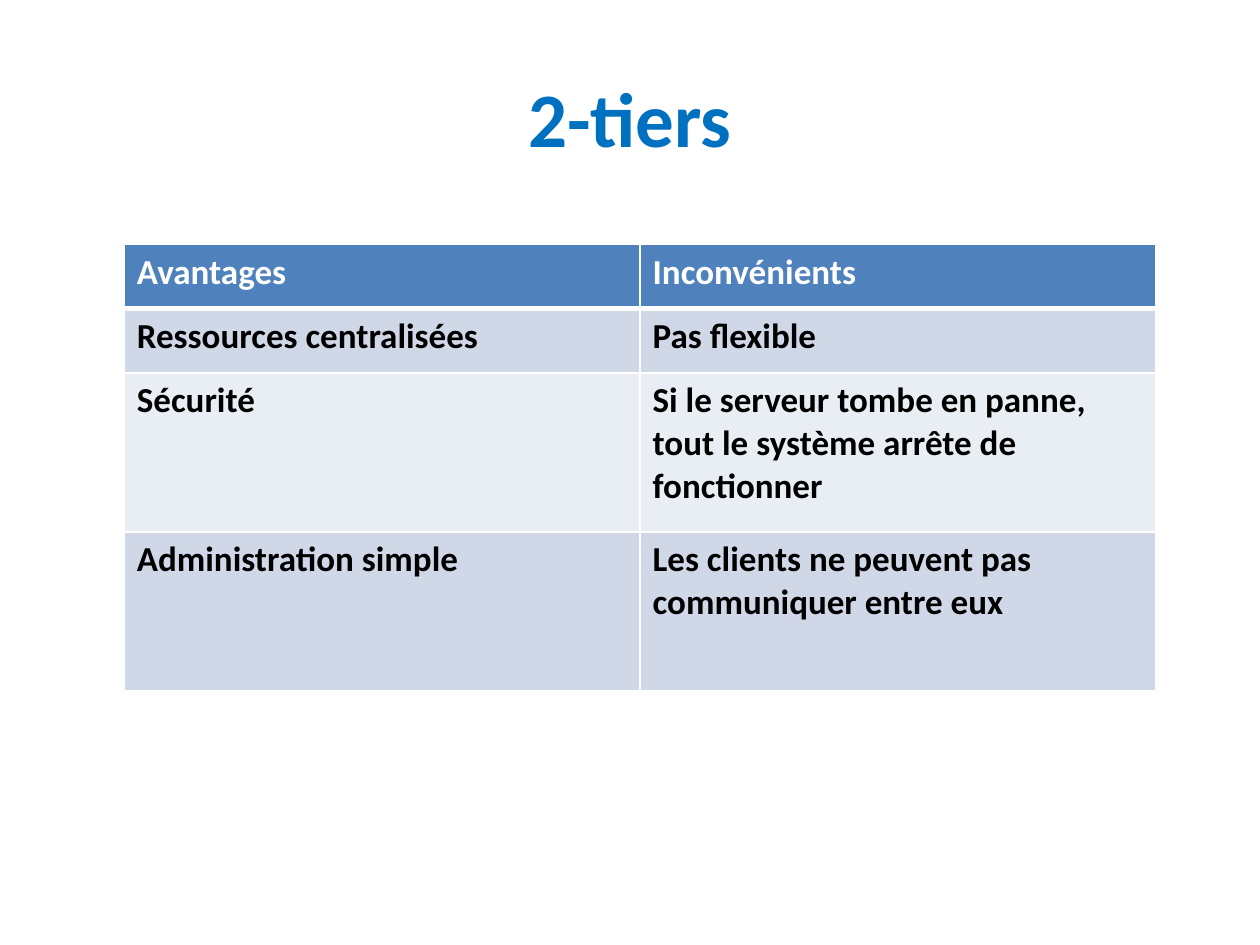
from dataclasses import dataclass

from lxml.etree import SubElement
from pptx import Presentation
from pptx.dml.color import RGBColor
from pptx.enum.text import MSO_ANCHOR, PP_ALIGN
from pptx.oxml.ns import qn
from pptx.util import Pt


@dataclass(frozen=True)
class Theme:
    font: str = "Calibri"
    title: str = "0070C0"
    head: str = "4F81BD"
    bands: tuple = ("D0D8E8", "E9EDF4")
    light: str = "FFFFFF"
    dark: str = "000000"
    title_size: int = 44
    cell_size: int = 20
    thin: int = 1
    thick: int = 3


THEME = Theme()
ROWS = [
    ("Avantages", "Inconvénients"),
    ("Ressources centralisées", "Pas flexible"),
    ("Sécurité", "Si le serveur tombe en panne, tout le système arrête de fonctionner"),
    ("Administration simple", "Les clients ne peuvent pas communiquer entre eux"),
]
HEIGHTS = [36.72, 36.72, 90.72, 90.72]
COL_WIDTH = 294.75


def write(frame, text, size, color):
    par = frame.paragraphs[0]
    par.text = text
    font = par.font
    font.name, font.size, font.bold = THEME.font, Pt(size), True
    font.color.rgb = RGBColor.from_string(color)
    return par


def add_title(slide, text):
    box = slide.shapes.add_textbox(Pt(36), Pt(21.6), Pt(648), Pt(90))
    frame = box.text_frame
    frame.word_wrap = True
    frame.vertical_anchor = MSO_ANCHOR.MIDDLE
    par = write(frame, text, THEME.title_size, THEME.title)
    par.alignment = PP_ALIGN.CENTER


def set_border(cell, **widths):
    # Border lines must come before the fill in the cell properties
    props = cell._tc.get_or_add_tcPr()
    for spot, side in enumerate("LRTB"):
        width = widths.get(side, THEME.thin)
        line = SubElement(props, qn(f"a:ln{side}"), w=str(Pt(width)))
        fill = SubElement(line, qn("a:solidFill"))
        SubElement(fill, qn("a:srgbClr"), val=THEME.light)
        props.insert(spot, line)


def fill_cell(cell, text, row):
    head = row == 0
    back = THEME.head if head else THEME.bands[(row - 1) % 2]
    cell.fill.solid()
    cell.fill.fore_color.rgb = RGBColor.from_string(back)
    write(cell.text_frame, text, THEME.cell_size, THEME.light if head else THEME.dark)
    # A thick line parts the header from the body
    edge = {0: {"B": THEME.thick}, 1: {"T": THEME.thick}}
    set_border(cell, **edge.get(row, {}))


def add_grid(slide, rows):
    count = len(rows[0])
    frame = slide.shapes.add_table(
        len(rows), count, Pt(71), Pt(139.75), Pt(COL_WIDTH * count), Pt(sum(HEIGHTS)))
    table = frame.table
    for col in table.columns:
        col.width = Pt(COL_WIDTH)
    for row, texts in enumerate(rows):
        table.rows[row].height = Pt(HEIGHTS[row])
        for col, text in enumerate(texts):
            fill_cell(table.cell(row, col), text, row)


def main():
    deck = Presentation()
    deck.slide_width, deck.slide_height = Pt(720), Pt(540)
    slide = deck.slides.add_slide(deck.slide_layouts[6])

    # Comparison table
    add_grid(slide, ROWS)
    # Heading
    add_title(slide, "2-tiers")

    deck.save("out.pptx")


if __name__ == "__main__":
    main()
